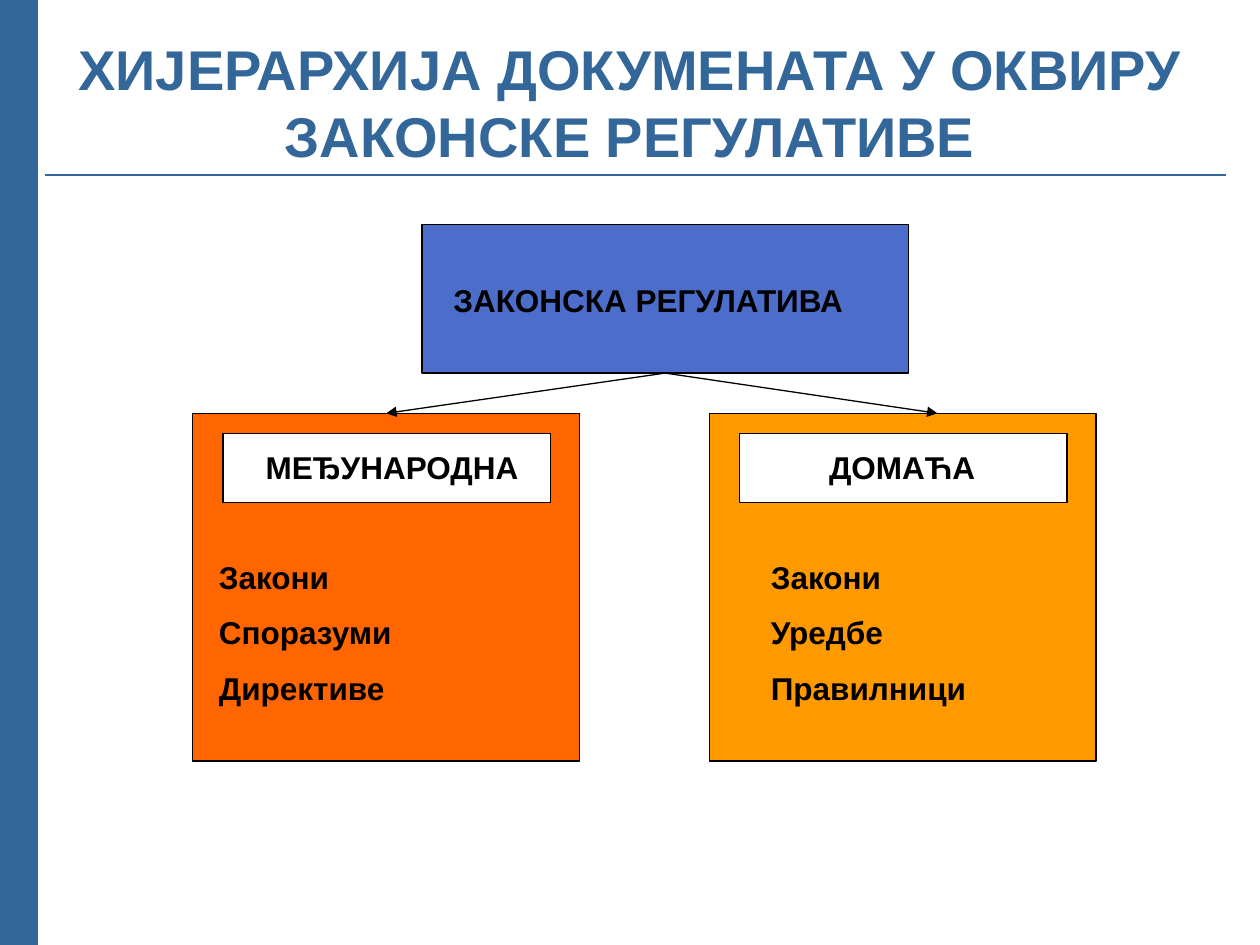
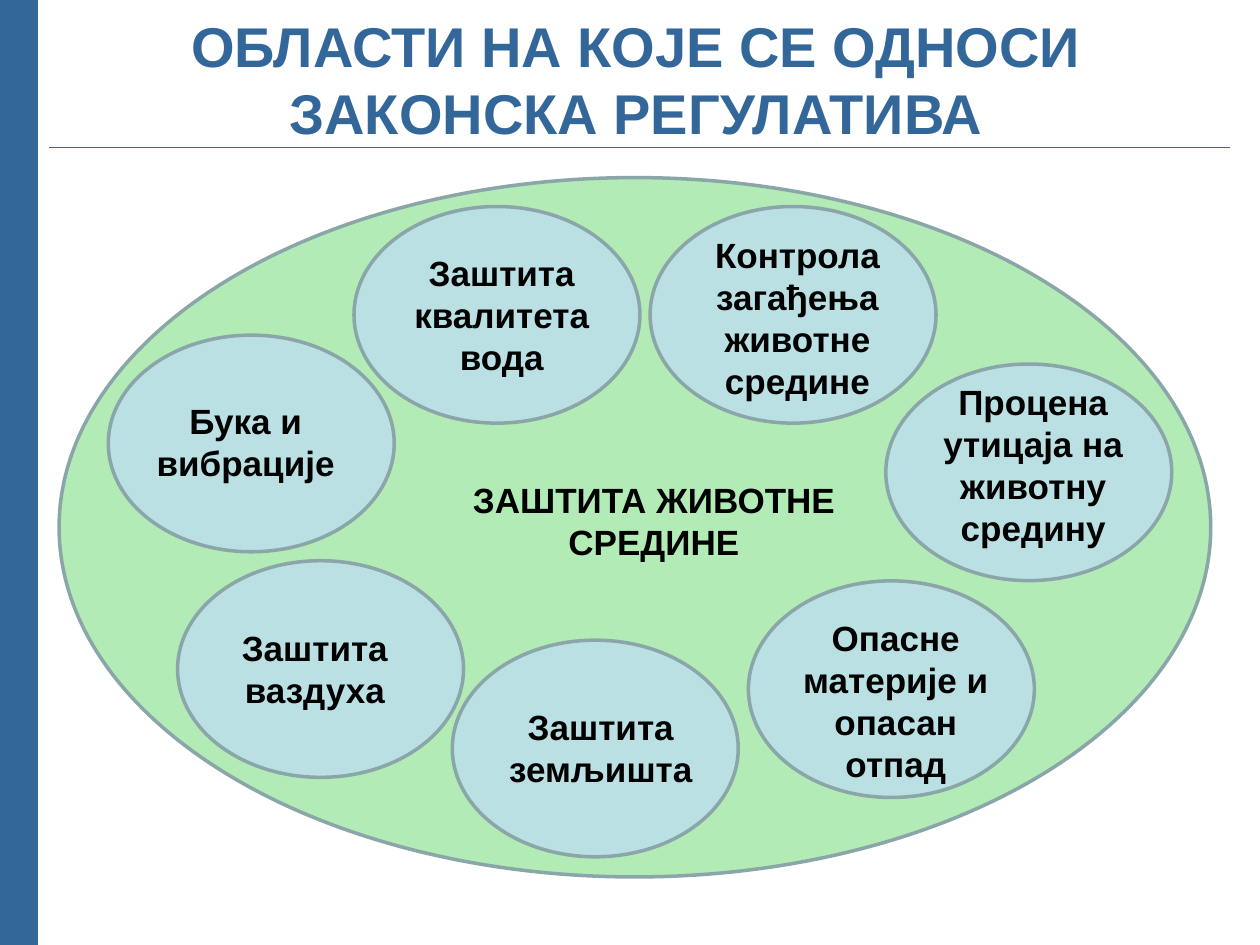
from lxml.etree import SubElement
from pptx import Presentation
from pptx.dml.color import RGBColor
from pptx.enum.shapes import MSO_CONNECTOR, MSO_SHAPE
from pptx.enum.text import MSO_ANCHOR, PP_ALIGN
from pptx.oxml.ns import qn
from pptx.util import Pt

COLOURS = {
    "accent": "336699",
    "text": "000000",
    "root": "4C6DCA",
    "international": "FF6600",
    "domestic": "FF9900",
    "header": "FFFFFF",
    "environment": "B3EBB6",
    "area": "BBE0E3",
    "outline": "8AA6A8",
}
FONT = "Arial"
BOTTOM, TOP = 2, 0


def colour(name):
    return RGBColor.from_string(COLOURS[name])


class SlideBuilder:
    def __init__(self):
        self.presentation = Presentation()
        self.presentation.slide_width = Pt(720)
        self.presentation.slide_height = Pt(540)
        self.slide = None

    def start_slide(self, title, title_box, rule_left, rule_top):
        """Add a slide with the side band, the title and the rule under it."""
        self.slide = self.presentation.slides.add_slide(self.presentation.slide_layouts[6])
        self.text(title_box, [title], 32, PP_ALIGN.CENTER, "accent", MSO_ANCHOR.MIDDLE)
        self.line((1.5, 0), (1.5, 540), "accent", 40)
        self.line((rule_left, rule_top), (rule_left + 675, rule_top), "accent")

    def text(self, box, lines, size, align=PP_ALIGN.LEFT, colour_name="text",
             anchor=MSO_ANCHOR.TOP):
        frame = self.slide.shapes.add_textbox(*map(Pt, box)).text_frame
        frame.word_wrap = True
        frame.vertical_anchor = anchor
        frame.text = "\n".join(lines)
        for index, paragraph in enumerate(frame.paragraphs):
            paragraph.alignment = align
            paragraph.space_before = Pt(10 if index else 0)
            font = paragraph.font
            font.name, font.size, font.bold = FONT, Pt(size), True
            font.color.rgb = colour(colour_name)

    def shape(self, kind, box, fill, line="text", width=0.75):
        shape = self.slide.shapes.add_shape(kind, *map(Pt, box))
        shape.shadow.inherit = False
        shape.fill.solid()
        shape.fill.fore_color.rgb = colour(fill)
        shape.line.color.rgb = colour(line)
        shape.line.width = Pt(width)
        return shape

    def rectangle(self, box, fill):
        return self.shape(MSO_SHAPE.RECTANGLE, box, fill)

    def ellipse(self, box, fill):
        return self.shape(MSO_SHAPE.OVAL, box, fill, "outline", 2)

    def line(self, start, end, colour_name="text", width=0.75):
        connector = self.slide.shapes.add_connector(
            MSO_CONNECTOR.STRAIGHT, *map(Pt, (*start, *end)))
        connector.line.color.rgb = colour(colour_name)
        connector.line.width = Pt(width)
        SubElement(connector._element.spPr, qn("a:effectLst"))
        return connector

    def arrow(self, start, end):
        connector = self.line(start, end)
        SubElement(connector.line._get_or_add_ln(), qn("a:tailEnd"), type="triangle")
        return connector


def build_hierarchy(builder):
    builder.start_slide("ХИЈЕРАРХИЈА ДОКУМЕНАТА У ОКВИРУ ЗАКОНСКЕ РЕГУЛАТИВЕ",
                        (36, 21.6, 648, 72.7), 25.5, 100)
    root = builder.rectangle((241.2, 128.2, 277.9, 85), "root")
    builder.text((252, 157, 266.4, 29), ["ЗАКОНСКА РЕГУЛАТИВА"], 18)

    # fill, header, header left, header width, alignment, items, items left
    branches = [
        ("international", "МЕЂУНАРОДНА", 144.7, 181.4, PP_ALIGN.LEFT,
         ["Закони", "Споразуми", "Директиве"], 118),
        ("domestic", "ДОМАЋА", 433.4, 164.2, PP_ALIGN.CENTER,
         ["Закони", "Уредбе", "Правилници"], 433.4),
    ]
    panels = []
    for column, branch in enumerate(branches):
        fill, header, header_left, header_width, align, items, items_left = branch
        offset = column * 295.2
        panels.append(builder.rectangle((110.2 + offset, 236.2, 221, 198.7), fill))
        builder.rectangle((127.4 + offset, 247.7, 187.2, 39.6), "header")
        builder.text((header_left, 252.7, header_width, 29), [header], 18, align)
        builder.text((items_left, 315.4, 193, 93.6), items, 18)

    to_international = builder.arrow((380, 213.2), (221, 236.2))
    to_international.end_connect(panels[0], TOP)
    to_domestic = builder.arrow((380, 213.2), (535.7, 236.2))
    for connector in (to_international, to_domestic):
        connector.begin_connect(root, BOTTOM)


def build_areas(builder):
    builder.start_slide("ОБЛАСТИ НА КОЈЕ СЕ ОДНОСИ ЗАКОНСКА РЕГУЛАТИВА",
                        (39.6, 0, 648, 90), 28, 84.3)
    builder.ellipse((33.8, 101.5, 658.1, 399.6), "environment")
    # label, ellipse left and top, label left and top, label line count
    areas = [
        ("Заштита ваздуха", 101.5, 320.4, 118, 354.2, 2),
        ("Заштита квалитета вода", 202.3, 118, 224.8, 140.4, 3),
        ("Заштита земљишта", 258.5, 365.8, 281.4, 399.6, 2),
        ("Опасне материје и опасан отпад", 427.7, 331.9, 450, 348.5, 4),
        ("Процена утицаја на животну средину", 506.2, 208, 528.5, 213.8, 4),
        ("Контрола загађења животне средине", 371.5, 118, 393.8, 129.6, 4),
        ("Бука и вибрације", 61.9, 191.5, 78.5, 224.6, 2),
    ]
    for label, left, top, label_left, label_top, line_count in areas:
        builder.ellipse((left, top, 163.4, 123.8), "area")
        builder.text((label_left, label_top, 123.8, 24 * line_count + 7.2),
                     [label], 20, PP_ALIGN.CENTER)
    builder.text((258.5, 270, 230.4, 55.2), ["ЗАШТИТА ЖИВОТНЕ СРЕДИНЕ"],
                 20, PP_ALIGN.CENTER)


def main():
    builder = SlideBuilder()
    build_hierarchy(builder)
    build_areas(builder)
    builder.presentation.save("out.pptx")


if __name__ == "__main__":
    main()
